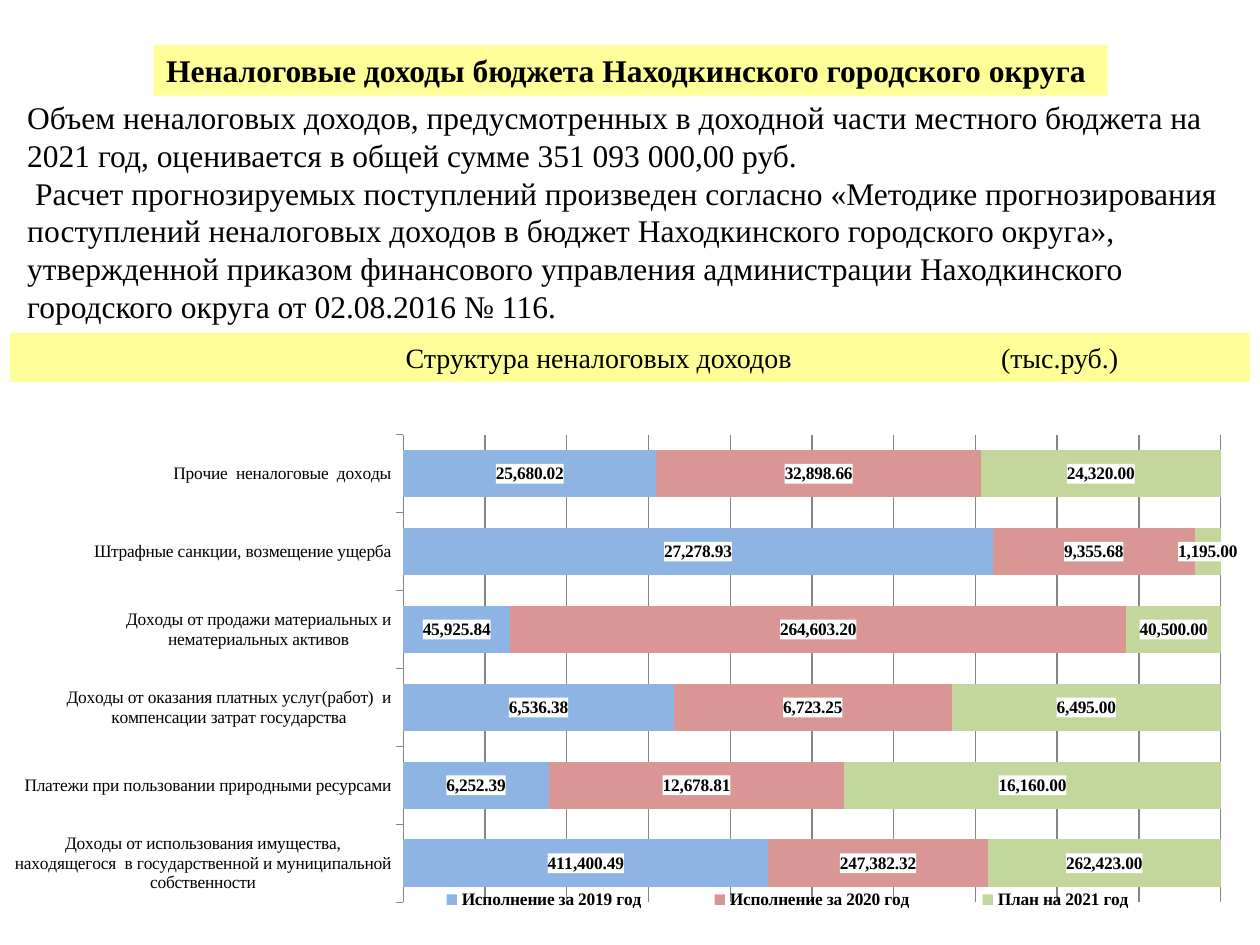
import lxml.etree
import pptx
import pptx.chart.data
import pptx.dml.color
import pptx.enum.chart
import pptx.enum.shapes
import pptx.enum.text
import pptx.oxml
import pptx.oxml.ns
import pptx.util
from pptx.util import Cm

COLOURS = {
    "banner": "FFFF99",
    "text": "000000",
    "grid": "868686",
    "label": "FFFFFF",
    "2019": "8EB4E3",
    "2020": "D99694",
    "2021": "C3D69B",
}
FONT = "Times New Roman"
NUMBER_FORMAT = "#,##0.00"

TITLE = "Неналоговые доходы бюджета Находкинского городского округа"
BODY = [
    "Объем неналоговых доходов, предусмотренных в доходной части местного бюджета "
    "на 2021 год, оценивается в общей сумме 351 093 000,00 руб.",
    " Расчет прогнозируемых поступлений произведен согласно «Методике прогнозирования "
    "поступлений неналоговых доходов в бюджет Находкинского городского округа», "
    "утвержденной приказом финансового управления администрации Находкинского "
    "городского округа от 02.08.2016 № 116.",
]
CATEGORIES = [
    "Доходы от использования имущества, находящегося  в государственной и "
    "муниципальной собственности",
    "Платежи при пользовании природными ресурсами",
    "Доходы от оказания платных услуг(работ)  и компенсации затрат государства",
    "Доходы от продажи материальных и нематериальных активов",
    "Штрафные санкции, возмещение ущерба",
    "Прочие  неналоговые  доходы",
]
SERIES = [
    ("Исполнение за 2019 год", "2019",
     [411400.49, 6252.39, 6536.38, 45925.84, 27278.93, 25680.02]),
    ("Исполнение за 2020 год", "2020",
     [247382.32, 12678.81, 6723.25, 264603.2, 9355.68, 32898.66]),
    ("План на 2021 год", "2021",
     [262423, 16160, 6495, 40500, 1195, 24320]),
]


def colour(name):
    return pptx.dml.color.RGBColor.from_string(COLOURS[name])


def chart_layout(x, y, width, height, inner=False):
    """Return a manual layout in fractions of the chart area."""
    target = '<c:layoutTarget val="inner"/>' if inner else ""
    return pptx.oxml.parse_xml(
        f'<c:layout {pptx.oxml.ns.nsdecls("c")}><c:manualLayout>{target}'
        '<c:xMode val="edge"/><c:yMode val="edge"/>'
        f'<c:x val="{x}"/><c:y val="{y}"/><c:w val="{width}"/><c:h val="{height}"/>'
        "</c:manualLayout></c:layout>")


class SlideBuilder:
    def __init__(self, slide):
        self.slide = slide

    def style_font(self, font, size, bold=False):
        font.name = FONT
        font.size = pptx.util.Pt(size)
        font.bold = bold
        font.color.rgb = colour("text")

    def fill_text(self, shape, text, size, bold=False, wrap=True):
        frame = shape.text_frame
        frame.text = text
        frame.word_wrap = wrap
        for paragraph in frame.paragraphs:
            paragraph.alignment = pptx.enum.text.PP_ALIGN.LEFT
            for run in paragraph.runs:
                self.style_font(run.font, size, bold)
        return frame

    def banner(self, box, text, size, bold=False, wrap=True):
        shape = self.slide.shapes.add_shape(
            pptx.enum.shapes.MSO_SHAPE.RECTANGLE, *map(Cm, box))
        shape.shadow.inherit = False
        shape.fill.solid()
        shape.fill.fore_color.rgb = colour("banner")
        shape.line.fill.background()
        frame = self.fill_text(shape, text, size, bold, wrap)
        frame.vertical_anchor = pptx.enum.text.MSO_ANCHOR.MIDDLE
        return frame

    def text(self, box, paragraphs, size):
        shape = self.slide.shapes.add_textbox(*map(Cm, box))
        self.fill_text(shape, "\n".join(paragraphs), size)

    def add_series_labels(self, series):
        labels = series.data_labels
        labels.show_value = True
        labels.number_format = NUMBER_FORMAT
        labels.number_format_is_linked = False
        self.style_font(labels.font, 10, bold=True)
        # Half-transparent white behind each value
        background = pptx.oxml.parse_xml(
            f'<c:spPr {pptx.oxml.ns.nsdecls("c", "a")}><a:solidFill>'
            f'<a:srgbClr val="{COLOURS["label"]}"><a:alpha val="50000"/></a:srgbClr>'
            "</a:solidFill></c:spPr>")
        labels._element.find(pptx.oxml.ns.qn("c:numFmt")).addnext(background)

    def stacked_chart(self, box, categories, series_rows):
        data = pptx.chart.data.CategoryChartData(number_format=NUMBER_FORMAT)
        data.categories = categories
        for name, _, values in series_rows:
            data.add_series(name, values)
        chart = self.slide.shapes.add_chart(
            pptx.enum.chart.XL_CHART_TYPE.BAR_STACKED_100, *map(Cm, box), data).chart
        chart.has_title = False
        self.style_font(chart.font, 10)

        # Bars
        plot = chart.plots[0]
        plot.gap_width = 64
        plot.overlap = 100
        plot.vary_by_categories = False
        for series, (_, key, _) in zip(plot.series, series_rows):
            series.format.fill.solid()
            series.format.fill.fore_color.rgb = colour(key)
            self.add_series_labels(series)

        # Axes
        category_axis, value_axis = chart.category_axis, chart.value_axis
        category_axis.major_tick_mark = pptx.enum.chart.XL_TICK_MARK.OUTSIDE
        self.style_font(category_axis.tick_labels.font, 10)
        value_axis.visible = False
        value_axis.minimum_scale, value_axis.maximum_scale = 0, 1
        value_axis.major_unit = 0.1
        value_axis.has_major_gridlines = True
        for line in (category_axis.format.line, value_axis.major_gridlines.format.line):
            line.color.rgb = colour("grid")
            line.width = pptx.util.Pt(0.75)

        # Legend and plot positions
        chart.has_legend = True
        legend = chart.legend
        legend.position = pptx.enum.chart.XL_LEGEND_POSITION.RIGHT
        legend.include_in_layout = False
        self.style_font(legend.font, 10, bold=True)
        legend._element.find(pptx.oxml.ns.qn("c:legendPos")).addnext(
            chart_layout(0.29, 0.92, 0.67, 0.05))
        plot_area = plot._element.getparent()
        for layout in plot_area.findall(pptx.oxml.ns.qn("c:layout")):
            plot_area.remove(layout)
        plot_area.insert(0, chart_layout(0.31, 0.06, 0.67, 0.89, inner=True))


def main():
    presentation = pptx.Presentation()
    presentation.slide_width, presentation.slide_height = Cm(25.4), Cm(19.05)
    builder = SlideBuilder(presentation.slides.add_slide(presentation.slide_layouts[6]))

    # Title and explanation
    builder.banner((3.1, 0.91, 19.23, 1.02), TITLE, 18, bold=True, wrap=False)
    builder.text((0.3, 1.85, 24.8, 5.64), BODY, 18)

    # Chart heading, with the unit at a tab stop
    heading = builder.banner(
        (0.2, 6.71, 25, 0.99), "Структура неналоговых доходов\t(тыс.руб.)", 16)
    heading.margin_left = Cm(7.98)
    properties = heading.paragraphs[0]._p.get_or_add_pPr()
    tabs = lxml.etree.SubElement(properties, pptx.oxml.ns.qn("a:tabLst"))
    lxml.etree.SubElement(tabs, pptx.oxml.ns.qn("a:tab"), pos=str(Cm(12)), algn="l")

    # Revenue structure
    builder.stacked_chart((0.3, 8.13, 24.8, 10.59), CATEGORIES, SERIES)

    presentation.save("out.pptx")


if __name__ == "__main__":
    main()
